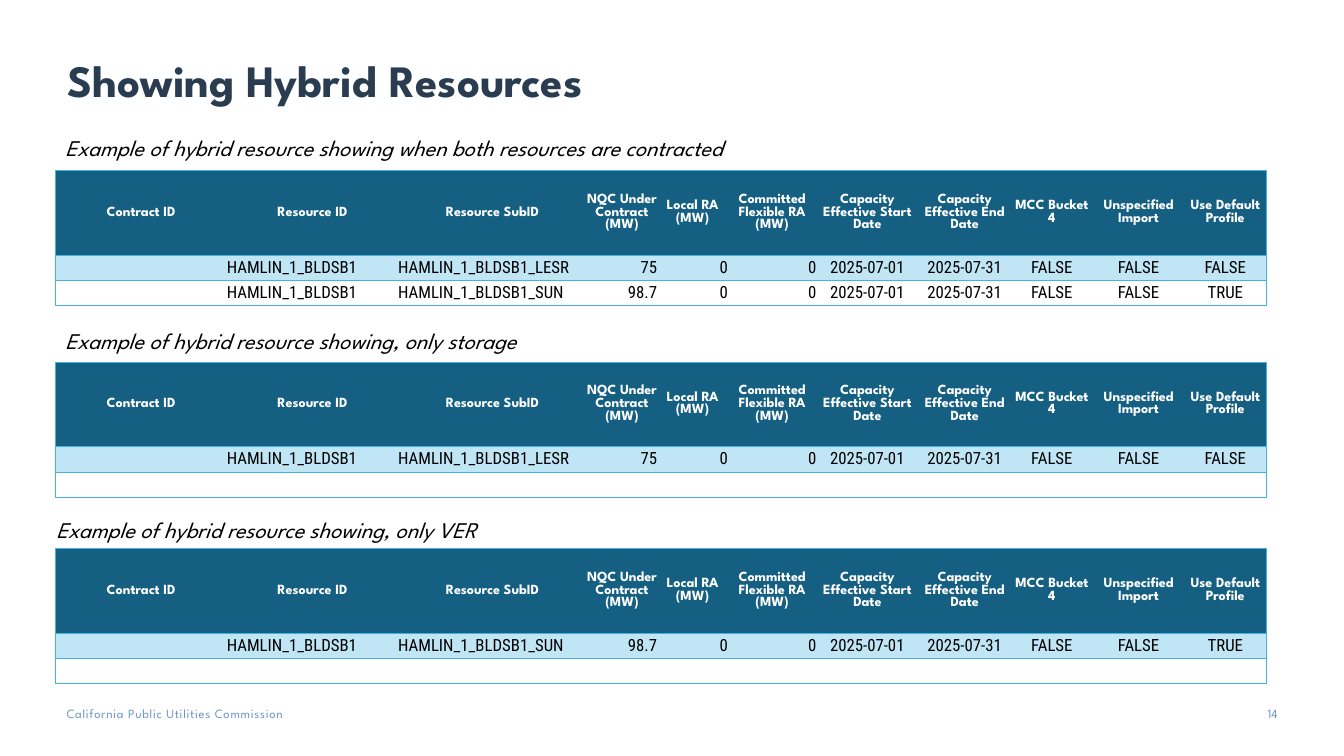
from lxml import etree
from pptx import Presentation
from pptx.dml.color import RGBColor
from pptx.enum.text import MSO_ANCHOR, PP_ALIGN
from pptx.oxml.ns import qn
from pptx.util import Inches, Pt

LEFT, CENTER, RIGHT = PP_ALIGN.LEFT, PP_ALIGN.CENTER, PP_ALIGN.RIGHT
TOP, MIDDLE, BOTTOM = MSO_ANCHOR.TOP, MSO_ANCHOR.MIDDLE, MSO_ANCHOR.BOTTOM

COLORS = {"title": "2A3C50", "footer": "6996C9", "header": "156082",
          "band": "C0E6F5", "border": "44B3E1", "white": "FFFFFF", "black": "000000"}
HEADING_FONT, DATA_FONT = "League Spartan", "Roboto Condensed"
FORMATS = {
    "title": {"name": HEADING_FONT, "size": Pt(32), "bold": True, "color": "title"},
    "caption": {"name": HEADING_FONT, "size": Pt(16), "italic": True, "color": "black"},
    "footer": {"name": HEADING_FONT, "size": Pt(9), "color": "footer"},
    "header": {"name": HEADING_FONT, "size": Pt(10), "bold": True, "color": "white"},
    "data": {"name": DATA_FONT, "size": Pt(12), "bold": False, "color": "black"},
}

# Heading, width in grid columns, alignment of the data
COLUMNS = [
    ("Contract ID", 12.75, LEFT),
    ("Resource ID", 12.75, LEFT),
    ("Resource SubID", 14.03, LEFT),
    ("NQC Under Contract (MW)", 5.25, RIGHT),
    ("Local RA (MW)", 5.25, RIGHT),
    ("Committed Flexible RA (MW)", 6.6, RIGHT),
    ("Capacity Effective Start Date", 7.58, CENTER),
    ("Capacity Effective End Date", 6.9, CENTER),
    ("MCC Bucket 4", 6.08, CENTER),
    ("Unspecified Import", 6.83, CENTER),
    ("Use Default Profile", 6.08, CENTER),
]
HEADER_HEIGHT, DATA_HEIGHT = 11.2, 3.35
TABLE_LEFT = 4.13


def resource_row(kind, capacity, default_profile):
    return ["", "HAMLIN_1_BLDSB1", f"HAMLIN_1_BLDSB1_{kind}", capacity, "0", "0",
            "2025-07-01", "2025-07-31", "FALSE", "FALSE", default_profile]


STORAGE = resource_row("LESR", "75", "FALSE")
SOLAR = resource_row("SUN", "98.7", "TRUE")
UNUSED = [""] * len(COLUMNS)

# Caption, its left and top, table top, data rows
EXAMPLES = [
    ("Example of hybrid resource showing when both resources are contracted",
     4.13, 17.07, 22.53, [STORAGE, SOLAR]),
    ("Example of hybrid resource showing, only storage",
     4.13, 42.67, 47.87, [STORAGE, UNUSED]),
    ("Example of hybrid resource showing, only VER",
     3.45, 67.6, 72.53, [SOLAR, UNUSED]),
]


class SlideBuilder:
    """Draws on one slide, measured on a grid of 100 columns by 100 rows."""

    def __init__(self, deck):
        self.column = deck.slide_width / 100
        self.row = deck.slide_height / 100
        self.slide = deck.slides.add_slide(deck.slide_layouts[6])

    def across(self, columns):
        return round(columns * self.column)

    def down(self, rows):
        return round(rows * self.row)

    def box(self, left, top, width, height):
        return self.across(left), self.down(top), self.across(width), self.down(height)

    def styled_run(self, paragraph, text, style, align):
        """Fill a paragraph; an empty one only keeps the size of its style."""
        paragraph.alignment = align
        if not text:
            size = str(int(FORMATS[style]["size"].pt * 100))
            etree.SubElement(paragraph._p, qn("a:endParaRPr"), sz=size)
            return None
        run = paragraph.add_run()
        run.text = text
        for key, value in FORMATS[style].items():
            if key == "color":
                run.font.color.rgb = RGBColor.from_string(COLORS[value])
            else:
                setattr(run.font, key, value)
        return run

    def text(self, text, place, style, margins=(0.1, 0.05, 0.1, 0.05),
             align=LEFT, anchor=TOP, spacing=0):
        frame = self.slide.shapes.add_textbox(*self.box(*place)).text_frame
        frame.word_wrap = True
        frame.vertical_anchor = anchor
        for side, inset in zip(("left", "top", "right", "bottom"), margins):
            setattr(frame, f"margin_{side}", Inches(inset))
        run = self.styled_run(frame.paragraphs[0], text, style, align)
        if spacing:
            run._r.get_or_add_rPr().set("spc", str(round(spacing * 100)))

    def borders(self, cell, drawn_sides):
        properties = cell._tc.get_or_add_tcPr()
        for side in "LRTB":
            line = etree.SubElement(properties, qn(f"a:ln{side}"), w=str(int(Pt(0.5))))
            if side in drawn_sides:
                fill = etree.SubElement(line, qn("a:solidFill"))
                etree.SubElement(fill, qn("a:srgbClr"), val=COLORS["border"])
            else:
                etree.SubElement(line, qn("a:noFill"))

    def cell(self, cell, text, style, align, fill, drawn_sides):
        self.borders(cell, drawn_sides)
        cell.fill.solid()
        cell.fill.fore_color.rgb = RGBColor.from_string(COLORS[fill])
        cell.vertical_anchor = MIDDLE
        for side in ("left", "top", "right", "bottom"):
            setattr(cell, f"margin_{side}", 0)
        self.styled_run(cell.text_frame.paragraphs[0], text, style, align)

    def resource_table(self, top, data_rows):
        headings, widths, alignments = zip(*COLUMNS)
        heights = [HEADER_HEIGHT] + [DATA_HEIGHT] * len(data_rows)
        place = self.box(TABLE_LEFT, top, sum(widths), sum(heights))
        table = self.slide.shapes.add_table(len(heights), len(widths), *place).table
        table.horz_banding = False
        for column, width in zip(table.columns, widths):
            column.width = self.across(width)
        for row, height in zip(table.rows, heights):
            row.height = self.down(height)
        last = len(widths) - 1
        for r, values in enumerate([headings, *data_rows]):
            style = "data" if r else "header"
            fill = ("header", "band", "white")[r]
            for c, value in enumerate(values):
                sides = "TB" + {0: "L", last: "R"}.get(c, "")
                align = alignments[c] if r else CENTER
                self.cell(table.cell(r, c), value, style, align, fill, sides)


def main():
    deck = Presentation()
    deck.slide_width, deck.slide_height = Inches(13.33), Inches(7.5)
    page = SlideBuilder(deck)
    flush = (0, 0, 0, 0)
    page.text("California Public Utilities Commission", (4.95, 93.33, 24.08, 2),
              "footer", flush, spacing=0.5)
    page.text("Showing Hybrid Resources", (5.03, 5.33, 90.1, 9.47), "title",
              (0, 0.05, 0.1, 0.05), anchor=BOTTOM)
    page.text("14", (91.9, 93.33, 3.15, 2.67), "footer", flush, align=RIGHT)
    for caption, left, top, table_top, data_rows in EXAMPLES:
        page.resource_table(table_top, data_rows)
        page.text(caption, (left, top, 62.34, 4.93), "caption")
    deck.save("out.pptx")


if __name__ == "__main__":
    main()
